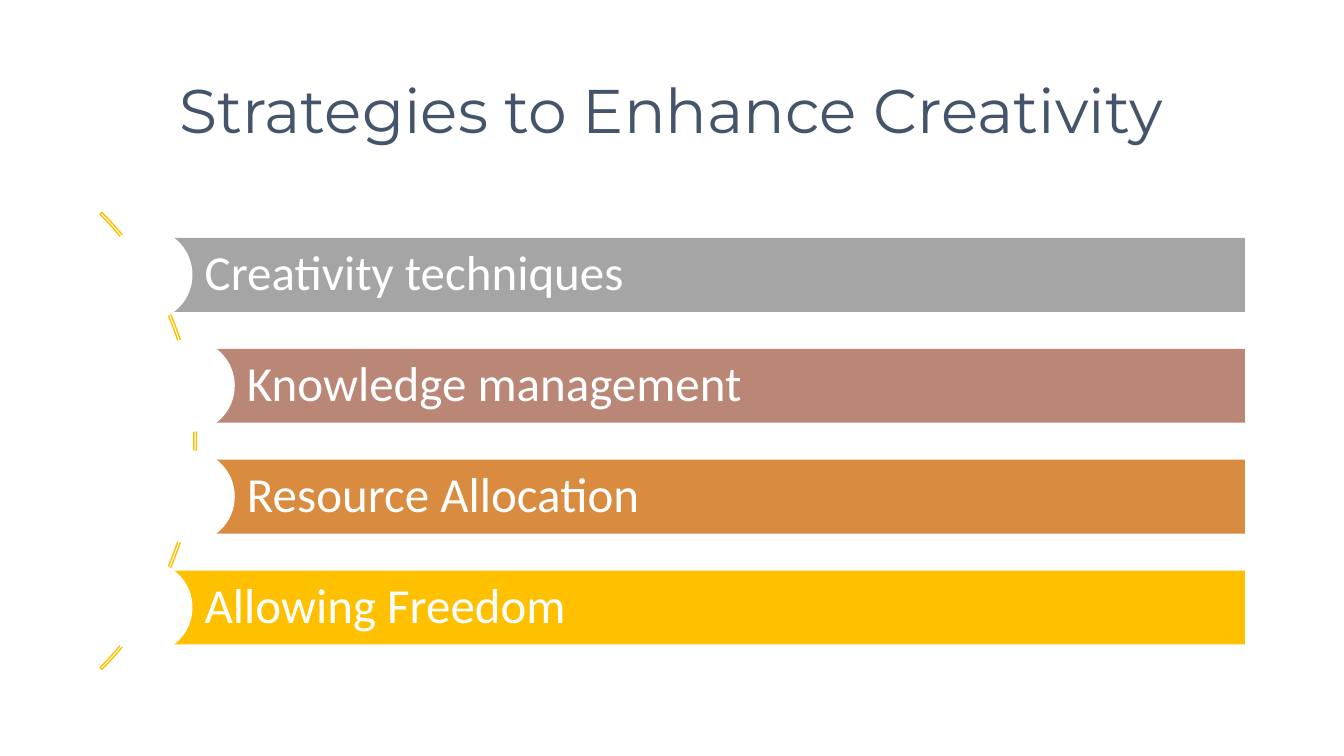
from dataclasses import dataclass

import pptx
import pptx.dml.color
import pptx.enum.shapes
import pptx.enum.text
import pptx.util

Pt = pptx.util.Pt
Kind = pptx.enum.shapes.MSO_SHAPE
Align = pptx.enum.text.PP_ALIGN

RIGHT = 889.2
TOP = 169.9
PITCH = 79.2
HEIGHT = 52.8
DISC = 66.2
OUTER = 104.4
INNER = 134.6


@dataclass
class Bar:
    text: str
    left: float
    fill: str


BARS = [
    Bar("Creativity techniques", OUTER, "A5A5A5"),
    Bar("Knowledge management", INNER, "BA8676"),
    Bar("Resource Allocation", INNER, "D98B3F"),
    Bar("Allowing Freedom", OUTER, "FFC000"),
]


def tint(code: str) -> pptx.dml.color.RGBColor:
    return pptx.dml.color.RGBColor.from_string(code)


def write(shape, text: str, *, size: float, font: str, color: str,
          align=Align.LEFT, inset: float = 7.2, pad: float = 7.2) -> None:
    frame = shape.text_frame
    frame.word_wrap = True
    frame.auto_size = pptx.enum.text.MSO_AUTO_SIZE.NONE
    frame.vertical_anchor = pptx.enum.text.MSO_ANCHOR.MIDDLE
    frame.margin_left = Pt(inset)
    frame.margin_right = Pt(7.2)
    frame.margin_top = frame.margin_bottom = Pt(pad)
    line = frame.paragraphs[0]
    line.alignment = align
    line.line_spacing = 0.9
    run = line.add_run()
    run.text = text
    run.font.size = Pt(size)
    run.font.name = font
    run.font.color.rgb = tint(color)


def draw(slide, kind, left: float, top: float, width: float, height: float,
         fill: str = "", edge: str = ""):
    shape = slide.shapes.add_shape(kind, Pt(left), Pt(top), Pt(width), Pt(height))
    shape.shadow.inherit = False
    if fill:
        shape.fill.solid()
        shape.fill.fore_color.rgb = tint(fill)
    else:
        shape.fill.background()
    if edge:
        shape.line.color.rgb = tint(edge)
        shape.line.width = Pt(1)
    else:
        shape.line.fill.background()
    return shape


def add_bar(slide, bar: Bar, top: float) -> None:
    strip = draw(slide, Kind.RECTANGLE, bar.left, top, RIGHT - bar.left, HEIGHT, bar.fill)
    write(strip, bar.text, size=35, font="Calibri", color="FFFFFF", inset=41.8)
    draw(slide, Kind.OVAL, bar.left - DISC / 2, top + (HEIGHT - DISC) / 2,
         DISC, DISC, "FFFFFF")


def main() -> None:
    deck = pptx.Presentation()
    deck.slide_width, deck.slide_height = Pt(960), Pt(540)
    slide = deck.slides.add_slide(deck.slide_layouts[5])

    title = slide.shapes.title
    title.left, title.top = Pt(66), Pt(28.8)
    title.width, title.height = Pt(828), Pt(104.4)
    write(title, "Strategies to Enhance Creativity", size=44, font="Montserrat",
          color="44546A", align=Align.CENTER, pad=3.6)

    arc = draw(slide, Kind.BLOCK_ARC, -321.1, 84.2, 461.5, 461.5, edge="FFC000")
    for index, value in enumerate((189, 27, 0.004)):
        arc.adjustments[index] = value

    for index, bar in enumerate(BARS):
        add_bar(slide, bar, TOP + index * PITCH)

    deck.save("out.pptx")


if __name__ == "__main__":
    main()
